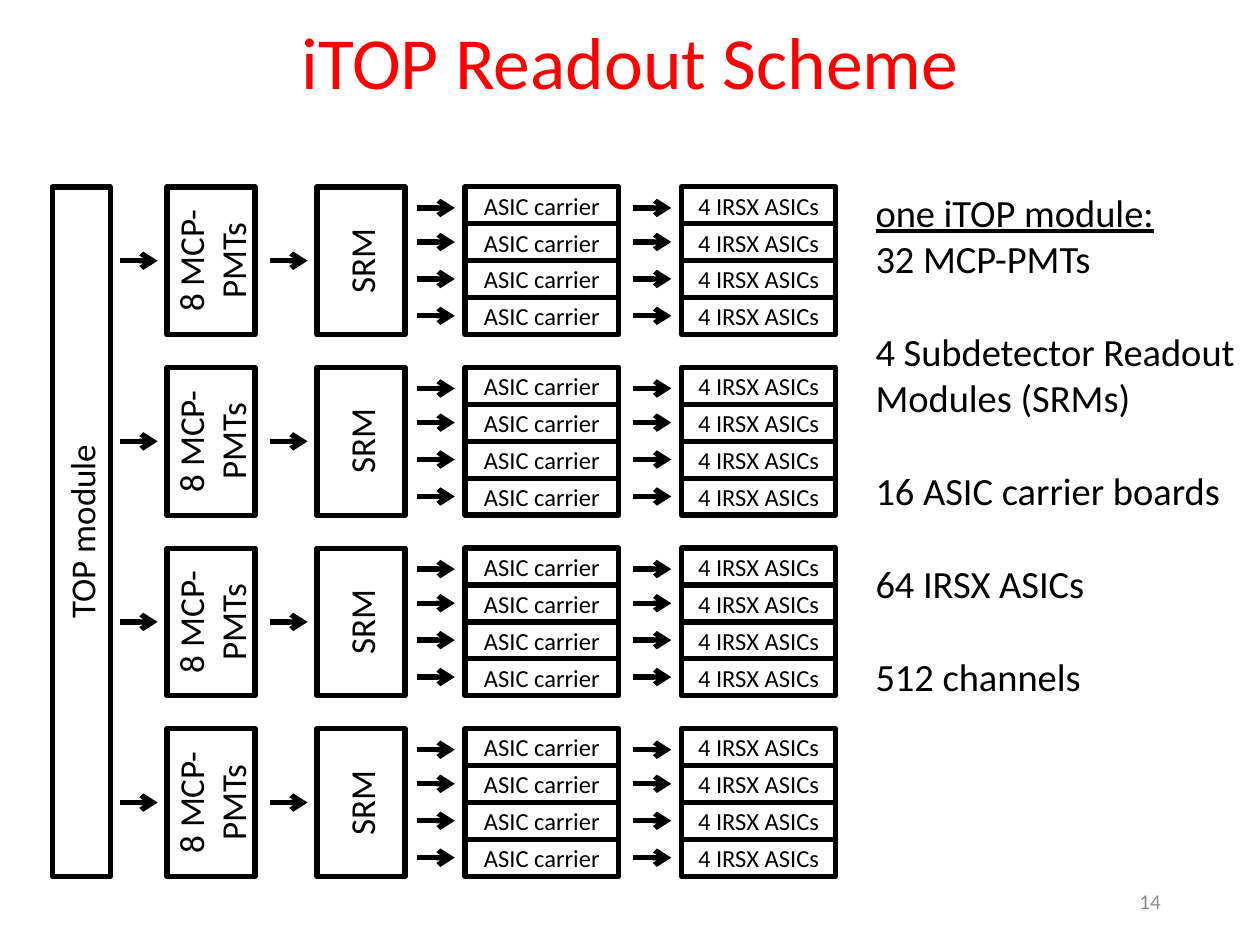
"""Build the iTOP readout scheme slide."""
from dataclasses import dataclass

from lxml import etree
from pptx import Presentation
from pptx.dml.color import RGBColor
from pptx.enum import shapes, text
from pptx.oxml import ns
from pptx.util import Pt


@dataclass(frozen=True)
class Theme:
    """Colours, font and sizes of the slide."""
    font: str = "Calibri"
    ink: RGBColor = RGBColor(0, 0, 0)
    paper: RGBColor = RGBColor(255, 255, 255)
    accent: RGBColor = RGBColor(255, 0, 0)
    muted: RGBColor = RGBColor(0x8C, 0x8C, 0x8C)
    title: int = 42
    summary: int = 22
    block: int = 20
    row: int = 14
    page: int = 12
    stroke: int = 3


THEME = Theme()
TOP, BRANCH_PITCH, BRANCH_HEIGHT = 106.8, 103.2, 84.4
BRANCHES, ROWS = 4, 4
ROW_HEIGHT = BRANCH_HEIGHT / ROWS
ARROW_LENGTH = 21.7
ROW_ARROWS = (12, 31.5, 52.6, 73.7)
BLOCK_COLUMNS = (("8 MCP-PMTs", 95.4, 68.4), ("SRM", 181.1, 154.1))
ROW_COLUMNS = (("ASIC carrier", 265.7, 238.2), ("4 IRSX ASICs", 389.5, 361.9))
SUMMARY = (
    ("one iTOP module:", False),
    ("32 MCP-PMTs", False),
    ("4 Subdetector Readout", True),
    ("Modules (SRMs)", False),
    ("16 ASIC carrier boards", True),
    ("64 IRSX ASICs", True),
    ("512 channels", True),
)


def style(paragraph, size, color, align):
    """Set the type and alignment of a paragraph."""
    paragraph.alignment = align
    paragraph.font.name = THEME.font
    paragraph.font.size = Pt(size)
    paragraph.font.color.rgb = color


def add_box(parent, label, left, top, width, height, size, upright=False):
    """Add an outlined box, its label turned upwards when upright."""
    if upright:
        left, top = left + (width - height) / 2, top + (height - width) / 2
        width, height = height, width
    box = parent.add_shape(shapes.MSO_SHAPE.RECTANGLE,
                           Pt(left), Pt(top), Pt(width), Pt(height))
    box.rotation = 270 if upright else 0
    box.shadow.inherit = False
    box.fill.solid()
    box.fill.fore_color.rgb = THEME.paper
    box.line.color.rgb = THEME.ink
    box.line.width = Pt(THEME.stroke)
    frame = box.text_frame
    frame.word_wrap = True
    frame.vertical_anchor = text.MSO_ANCHOR.MIDDLE
    frame.text = label
    style(frame.paragraphs[0], size, THEME.ink, text.PP_ALIGN.CENTER)


def add_arrow(parent, left, y):
    """Add a short arrow pointing right."""
    arrow = parent.add_connector(shapes.MSO_CONNECTOR.STRAIGHT, Pt(left), Pt(y),
                                 Pt(left + ARROW_LENGTH), Pt(y))
    arrow.line.color.rgb = THEME.ink
    arrow.line.width = Pt(THEME.stroke)
    etree.SubElement(arrow.line._get_or_add_ln(), ns.qn("a:tailEnd"), type="arrow")
    etree.SubElement(arrow._element.spPr, ns.qn("a:effectLst"))


def add_text(parent, lines, left, top, width, height, size, color, align, anchor):
    """Add a text box with one paragraph per line and return its paragraphs."""
    frame = parent.add_textbox(Pt(left), Pt(top), Pt(width), Pt(height)).text_frame
    frame.word_wrap = True
    frame.vertical_anchor = anchor
    frame.text = "\n".join(lines)
    for paragraph in frame.paragraphs:
        style(paragraph, size, color, align)
    return frame.paragraphs


def add_branch(parent, top):
    """Add one readout branch, from its PMTs to its ASICs."""
    for label, left, arrow_left in BLOCK_COLUMNS:
        add_box(parent, label, left, top, 50.4, BRANCH_HEIGHT, THEME.block, upright=True)
        add_arrow(parent, arrow_left, top + BRANCH_HEIGHT / 2)
    for label, left, arrow_left in ROW_COLUMNS:
        for row, arrow_drop in enumerate(ROW_ARROWS):
            add_box(parent, label, left, top + row * ROW_HEIGHT, 88, ROW_HEIGHT, THEME.row)
            add_arrow(parent, arrow_left, top + arrow_drop)


def add_summary(parent):
    """Add the component counts, with a line's gap before each new count."""
    paragraphs = add_text(parent, [line for line, _ in SUMMARY], 493.2, 104.4, 226.8, 326.9,
                          THEME.summary, THEME.ink, text.PP_ALIGN.LEFT, text.MSO_ANCHOR.TOP)
    paragraphs[0].font.underline = True
    for paragraph, (_, gap) in zip(paragraphs, SUMMARY):
        paragraph.space_before = Pt(26.8 if gap else 0)


def main():
    """Build and save the slide."""
    deck = Presentation()
    deck.slide_width, deck.slide_height = Pt(720), Pt(540)
    slide = deck.slides.add_slide(deck.slide_layouts[6])
    title = add_text(slide.shapes, ["iTOP Readout Scheme"], 0, 0.7, 720, 74.2, THEME.title,
                     THEME.accent, text.PP_ALIGN.CENTER, text.MSO_ANCHOR.MIDDLE)
    title[0].line_spacing = 0.9
    scheme = slide.shapes.add_group_shape().shapes
    add_box(scheme, "TOP module", 29.9, TOP, 33.1,
            (BRANCHES - 1) * BRANCH_PITCH + BRANCH_HEIGHT, THEME.block, upright=True)
    for branch in range(BRANCHES):
        add_branch(scheme, TOP + branch * BRANCH_PITCH)
    add_summary(slide.shapes)
    add_text(slide.shapes, ["14"], 508.3, 500.4, 162, 28.8, THEME.page,
             THEME.muted, text.PP_ALIGN.RIGHT, text.MSO_ANCHOR.MIDDLE)
    deck.save("out.pptx")


if __name__ == "__main__":
    main()
